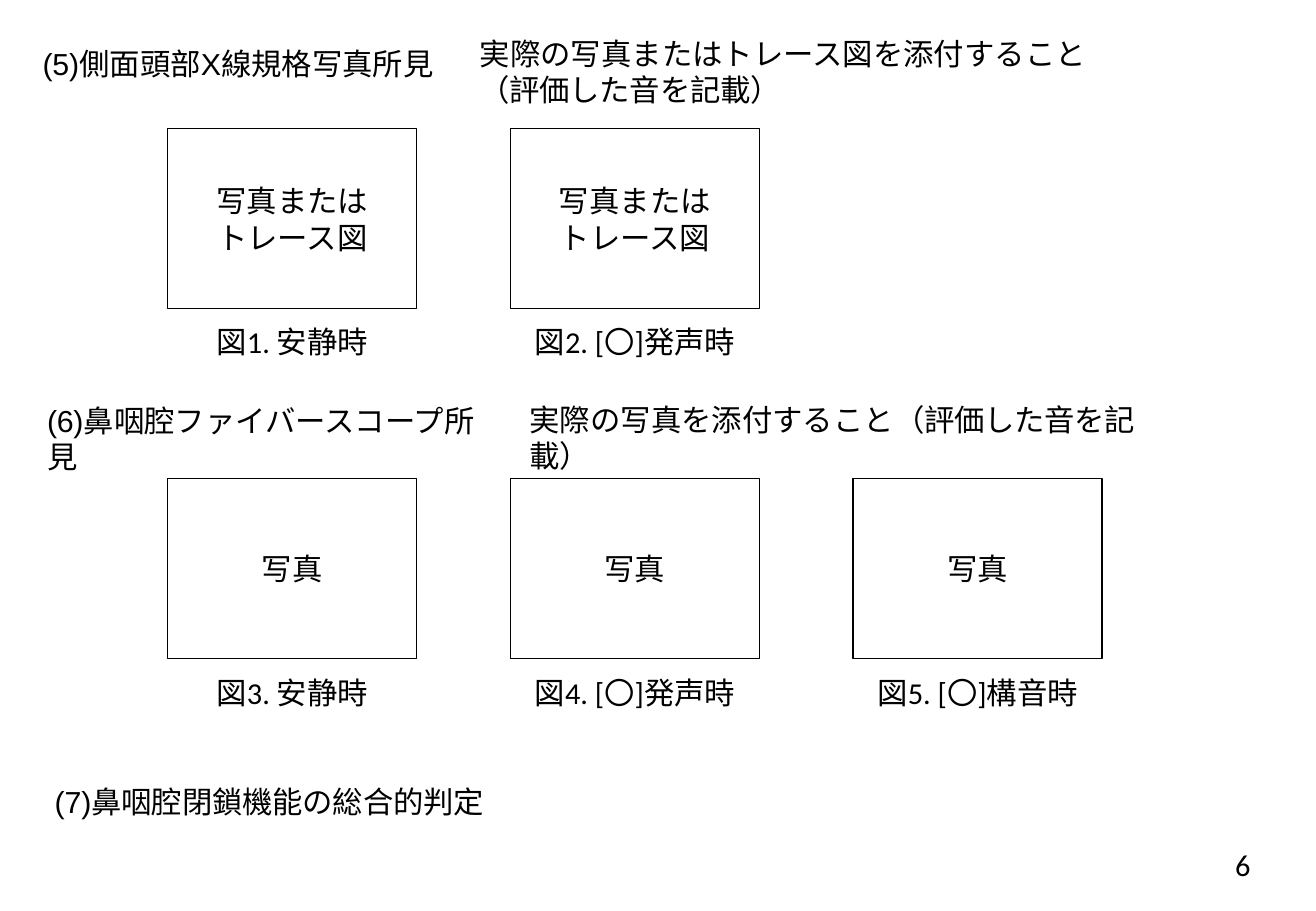
from dataclasses import dataclass

from pptx import Presentation
from pptx import util as u
from pptx.dml.color import RGBColor
from pptx.enum import shapes, text

PX = 9144  # 100 px to the inch
HEX = {"ink": "000000"}
INK = RGBColor.from_string(HEX["ink"])
LEFT, MID, RIGHT = text.PP_ALIGN.LEFT, text.PP_ALIGN.CENTER, text.PP_ALIGN.RIGHT
TOP, CENTER = text.MSO_ANCHOR.TOP, text.MSO_ANCHOR.MIDDLE

COL, STEP = 138, 282
WIDE, HIGH = 205, 148
PAD = (10, 5, 10, 5)
SLIM = (0, 1, 0, 0)


@dataclass(frozen=True)
class Run:
    words: str
    font: str = "Calibri"
    track: int = 0  # hundredths of a point


@dataclass(frozen=True)
class Box:
    x: int
    y: int
    w: int
    h: int
    runs: tuple[Run, ...]
    pad: tuple[int, int, int, int] = PAD
    align: text.PP_ALIGN = LEFT
    lead: int = 0


@dataclass(frozen=True)
class Row:
    top: int
    label: int
    lines: tuple[str, ...]
    names: tuple[str, ...]


def heading(num: str, words: str, track: int) -> tuple[Run, ...]:
    return Run(num, "Arial", track), Run(words, "Arial")


def notice(words: str) -> tuple[Run, ...]:
    return Run(words), Run("（評価した音を記載）", "Arial", -20)


TITLE = Box(35, 36, 784, 63, heading("(5)", "側面頭部X線規格写真所見", -10), SLIM, lead=1)
BOXES = (
    Box(385, 24, 550, 71, notice("実際の写真またはトレース図を添付すること")),
    Box(29, 326, 373, 71, heading("(6)", "鼻咽腔ファイバースコープ所見", -20)),
    Box(426, 325, 550, 40, notice("実際の写真を添付すること")),
    Box(45, 644, 971, 32, (Run("(7)鼻咽腔閉鎖機能の総合的判定", "Arial", -10),), SLIM, lead=1),
    Box(780, 697, 249, 30, (Run("6"),), (0, 0, 0, 0), RIGHT),
)
ROWS = (
    Row(106, 261, ("写真または", "トレース図"), ("図1. 安静時", "図2. [〇]発声時")),
    Row(394, 550, ("写真",), ("図3. 安静時", "図4. [〇]発声時", "図5. [〇]構音時")),
)


def add_run(para, run: Run) -> None:
    item = para.add_run()
    item.text = run.words
    item.font.name = run.font
    item.font.size = u.Pt(18)
    item.font.color.rgb = INK
    if run.track:
        item._r.get_or_add_rPr().set("spc", str(run.track))


def set_frame(frame, pad: tuple[int, int, int, int], anchor: text.MSO_ANCHOR) -> None:
    frame.word_wrap = True
    frame.auto_size = text.MSO_AUTO_SIZE.NONE
    frame.vertical_anchor = anchor
    frame.margin_left, frame.margin_top, frame.margin_right, frame.margin_bottom = (
        n * PX for n in pad)


def fill_box(shape, box: Box) -> None:
    set_frame(shape.text_frame, box.pad, TOP)
    para = shape.text_frame.paragraphs[0]
    para.alignment = box.align
    para.space_before = u.Pt(box.lead)
    for run in box.runs:
        add_run(para, run)


def add_box(slide, box: Box) -> None:
    fill_box(slide.shapes.add_textbox(box.x * PX, box.y * PX, box.w * PX, box.h * PX), box)


def add_photo(slide, x: int, row: Row) -> None:
    shape = slide.shapes.add_shape(
        shapes.MSO_SHAPE.RECTANGLE, x * PX, row.top * PX, WIDE * PX, HIGH * PX)
    shape.shadow.inherit = False
    shape.fill.background()
    shape.line.color.rgb = INK
    shape.line.width = u.Pt(0.75)
    frame = shape.text_frame
    set_frame(frame, PAD, CENTER)
    for i, line in enumerate(row.lines):
        para = frame.add_paragraph() if i else frame.paragraphs[0]
        para.alignment = MID
        add_run(para, Run(line))


def main() -> None:
    deck = Presentation()
    deck.slide_width, deck.slide_height = 1083 * PX, 750 * PX
    slide = deck.slides.add_slide(deck.slide_layouts.get_by_name("Title Only"))

    title = slide.shapes.title
    title.left, title.top = TITLE.x * PX, TITLE.y * PX
    title.width, title.height = TITLE.w * PX, TITLE.h * PX
    fill_box(title, TITLE)

    for box in BOXES:
        add_box(slide, box)
    for row in ROWS:
        for i, name in enumerate(row.names):
            x = COL + i * STEP
            add_photo(slide, x, row)
            add_box(slide, Box(x, row.label, WIDE, 40, (Run(name),), align=MID))

    deck.save("out.pptx")


if __name__ == "__main__":
    main()
